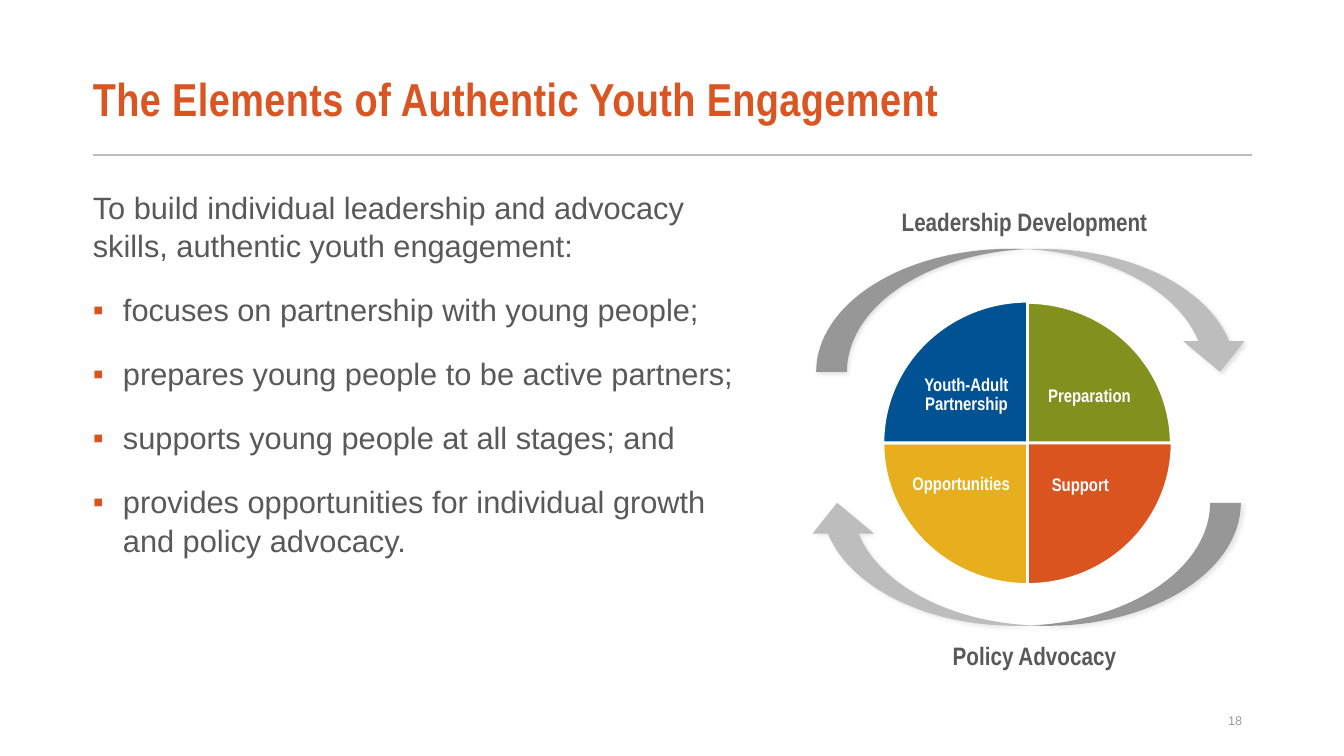
from lxml import etree
from pptx import Presentation
from pptx import util as u
from pptx.dml.color import RGBColor
from pptx.enum import shapes, text
from pptx.oxml import ns

ORANGE = RGBColor(0xDA, 0x55, 0x21)
SUPPORT_ORANGE = RGBColor(0xD9, 0x54, 0x1F)
BLUE = RGBColor(0x00, 0x52, 0x93)
GREEN = RGBColor(0x82, 0x91, 0x1D)
YELLOW = RGBColor(0xE7, 0xAF, 0x1D)
SILVER = RGBColor(0xBD, 0xBD, 0xBD)
GREY = RGBColor(0x9B, 0x9B, 0x9B)
CHARCOAL = RGBColor(0x59, 0x59, 0x59)
WHITE = RGBColor(0xFF, 0xFF, 0xFF)
BLACK = RGBColor(0, 0, 0)

MIDDLE = text.MSO_ANCHOR.MIDDLE
CENTER = text.PP_ALIGN.CENTER
RIGHT = text.PP_ALIGN.RIGHT

INTRO = "To build individual leadership and advocacy skills, authentic youth engagement:"
BULLETS = (
    "focuses on partnership with young people;",
    "prepares young people to be active partners;",
    "supports young people at all stages; and",
    "provides opportunities for individual growth and policy advocacy.",
)
QUARTERS = (
    ("Preparation", GREEN, (22.23, 7.62), (162, 0), (26.11, 8.92, 2.69, 2.13)),
    ("Support", SUPPORT_ORANGE, (22.25, 7.59), (0, 54), (25.88, 11.18, 2.69, 2.13)),
    ("Opportunities", YELLOW, (22.25, 7.59), (54, 108), (22.58, 11.15, 3.28, 2.13)),
    ("Youth-Adult Partnership", BLUE, (22.25, 7.59), (108, 162), (23.01, 8.89, 2.69, 2.13)),
)


def apply(target, values):
    for name, value in values.items():
        setattr(target, name, value)


def add_child(parent, tag, **attributes):
    return etree.SubElement(parent, ns.qn(tag), attributes)


def add_box(page, place, margins=(0.25, 0.13, 0.25, 0.13), anchor=text.MSO_ANCHOR.TOP):
    frame = page.shapes.add_textbox(*map(u.Cm, place)).text_frame
    sides = ("margin_left", "margin_top", "margin_right", "margin_bottom")
    apply(frame, dict(zip(sides, map(u.Cm, margins))))
    apply(frame, {"word_wrap": True, "vertical_anchor": anchor})
    return frame


def write(para, words, size, color, name="Arial", bold=False, **layout):
    apply(para, layout)
    span = para.add_run()
    span.text = words
    apply(span.font, {"size": u.Pt(size), "name": name, "bold": bold})
    span.font.color.rgb = color
    return span


def add_bullet(para):
    properties = para._p.get_or_add_pPr()
    properties.set("marL", str(u.Cm(0.76)))
    properties.set("indent", str(-u.Cm(0.76)))
    add_child(add_child(properties, "a:buClr"), "a:srgbClr", val=str(ORANGE))
    add_child(properties, "a:buFont", typeface="Arial")
    add_child(properties, "a:buChar", char="▪")


def add_title(page):
    frame = add_box(page, (2.34, 1.37, 29.21, 2.41), (0, 0.13, 0.25, 0.13), MIDDLE)
    span = write(frame.paragraphs[0], "The Elements of Authentic Youth Engagement",
                 33, ORANGE, "Arial Narrow", True, line_spacing=0.87)
    span.font._element.set("spc", "30")


def add_rule(page):
    rule = page.shapes.add_connector(
        shapes.MSO_CONNECTOR.STRAIGHT, u.Cm(2.34), u.Cm(3.91), u.Cm(31.55), u.Cm(3.91))
    rule.line.color.rgb = SILVER
    rule.line.width = u.Pt(1.5)
    add_child(rule._element.spPr, "a:effectLst")


def add_body(page):
    frame = add_box(page, (2.34, 4.57, 16.64, 12.95), (0, 0.13, 0.25, 0.13))
    write(frame.paragraphs[0], INTRO, 22, CHARCOAL, line_spacing=1.05)
    for words in BULLETS:
        para = frame.add_paragraph()
        add_bullet(para)
        write(para, words, 22, CHARCOAL, line_spacing=1.05, space_before=u.Pt(18))


def add_filled(page, preset, place, color):
    shape = page.shapes.add_shape(preset, *map(u.Cm, place))
    shape.shadow.inherit = False
    shape.fill.solid()
    shape.fill.fore_color.rgb = color
    return shape


def add_quarter(page, words, color, corner, angles, label_place):
    pie = add_filled(page, shapes.MSO_SHAPE.PIE, (*corner, 7.29, 7.14), color)
    pie.adjustments[0], pie.adjustments[1] = angles
    pie.line.color.rgb = WHITE
    pie.line.width = u.Pt(2)
    frame = add_box(page, label_place, (0.05,) * 4, MIDDLE)
    write(frame.paragraphs[0], words, 13, WHITE, "Arial Narrow", True,
          alignment=CENTER, line_spacing=0.9)


def add_arrow(page, left, top, rotation, opacity):
    arrow = add_filled(page, shapes.MSO_SHAPE.CURVED_DOWN_ARROW,
                       (left, top, 10.95, 3.1), SILVER)
    arrow.rotation = rotation
    arrow.line.fill.background()
    effects = arrow._element.spPr.find(ns.qn("a:effectLst"))
    shadow = add_child(effects, "a:outerShdw", blurRad=str(u.Pt(3)), dist=str(u.Pt(2)),
                       dir="2700000", algn="tl", rotWithShape="0")
    tint = add_child(shadow, "a:srgbClr", val=str(BLACK))
    add_child(tint, "a:alpha", val=str(opacity * 1000))


def add_caption(page, words, left, top):
    frame = add_box(page, (left, top, 9.12, 1.02))
    write(frame.paragraphs[0], words, 18, CHARCOAL, "Arial Narrow", True, alignment=CENTER)


def add_number(page):
    frame = add_box(page, (23.93, 17.65, 7.62, 1.02), anchor=MIDDLE)
    write(frame.paragraphs[0], "18", 9, GREY, alignment=RIGHT)


def main():
    deck = Presentation()
    apply(deck, {"slide_width": u.Cm(33.87), "slide_height": u.Cm(19.05)})
    page = deck.slides.add_slide(deck.slide_layouts[6])
    add_rule(page)
    add_title(page)
    add_body(page)
    add_number(page)
    for quarter in QUARTERS:
        add_quarter(page, *quarter)
    add_arrow(page, 20.57, 6.27, 0, 12)
    add_arrow(page, 20.32, 12.67, 180, 9)
    add_caption(page, "Leadership Development", 21.26, 5.08)
    add_caption(page, "Policy Advocacy", 21.51, 16)
    deck.save("out.pptx")


if __name__ == "__main__":
    main()
